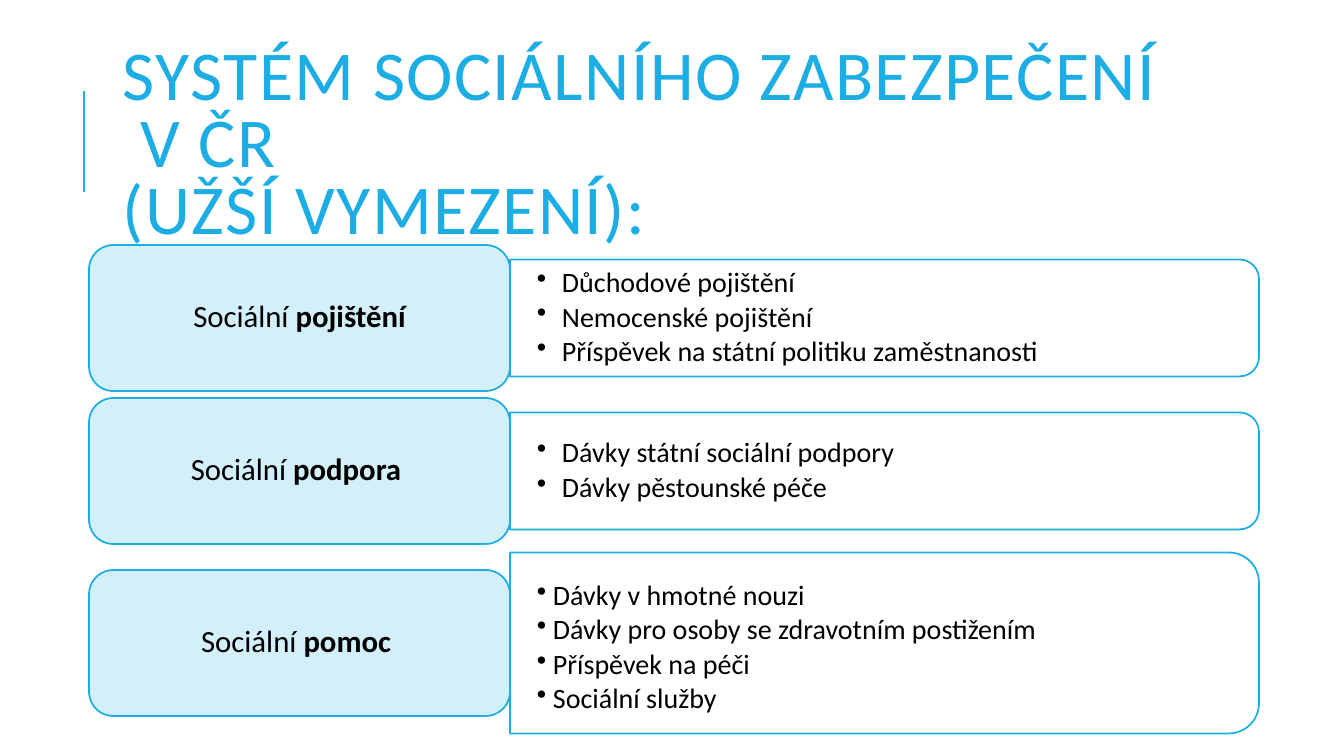
from lxml import etree
from pptx import Presentation
from pptx.dml.color import RGBColor
from pptx.enum.shapes import MSO_CONNECTOR, MSO_SHAPE
from pptx.enum.text import MSO_ANCHOR, MSO_AUTO_SIZE, PP_ALIGN
from pptx.oxml.ns import qn
from pptx.util import Emu, Pt

TITLE = ["SYSTÉM SOCIÁLNÍHO ZABEZPEČENÍ", " V ČR", "(UŽŠÍ VYMEZENÍ):"]
ROWS = [
    dict(label="pojištění", top=245, panel_h=117, shift=0, indent=25, align=PP_ALIGN.JUSTIFY,
         items=["Důchodové pojištění", "Nemocenské pojištění",
                "Příspěvek na státní politiku zaměstnanosti"]),
    dict(label="podpora ", top=398, panel_h=117, shift=0, indent=25, align=PP_ALIGN.JUSTIFY,
         items=["Dávky státní sociální podpory", "Dávky pěstounské péče"]),
    dict(label="pomoc ", top=570, panel_h=181, shift=5, indent=16, align=PP_ALIGN.LEFT,
         items=["Dávky v hmotné nouzi", "Dávky pro osoby se zdravotním postižením",
                "Příspěvek na péči", "Sociální služby"]),
]

BLUE = RGBColor(0x1C, 0xAD, 0xE4)
PALE = RGBColor(0xD2, 0xEF, 0xFA)
WHITE = RGBColor(0xFF, 0xFF, 0xFF)
BLACK = RGBColor(0, 0, 0)
FONT = "Calibri"
LABEL_X, LABEL_W, LABEL_H = 89, 421, 146
PANEL_X, PANEL_W = LABEL_X + LABEL_W, 749


def px(n):
    return Emu(round(n * 914400 / 100.8))


def add_run(p, text, size, color=BLACK, bold=False):
    r = p.add_run()
    r.text = text
    r.font.name = FONT
    r.font.size = Pt(size)
    r.font.color.rgb = color
    r.font.bold = bold
    return r


def add_box(s, kind, x, y, w, h, fill):
    sp = s.shapes.add_shape(kind, px(x), px(y), px(w), px(h))
    sp.shadow.inherit = False
    sp.fill.solid()
    sp.fill.fore_color.rgb = fill
    sp.line.color.rgb = BLUE
    sp.line.width = Pt(1.25)
    return sp


def set_frame(tf, side, edge):
    tf.word_wrap = True
    tf.auto_size = MSO_AUTO_SIZE.NONE
    tf.vertical_anchor = MSO_ANCHOR.MIDDLE
    tf.margin_left = tf.margin_right = px(side)
    tf.margin_top = tf.margin_bottom = px(edge)


def set_bullet(p, indent):
    pPr = p._p.get_or_add_pPr()
    pPr.set("marL", str(px(indent)))
    pPr.set("indent", str(-px(indent)))
    etree.SubElement(pPr, qn("a:buChar")).set("char", "•")


def add_title(s):
    title = s.shapes.title
    title.left, title.top, title.width, title.height = px(113), px(65), px(1072), px(165)
    tf = title.text_frame
    set_frame(tf, 10, 5)
    p = tf.paragraphs[0]
    p.alignment = PP_ALIGN.LEFT
    p.line_spacing = 0.8
    for i, line in enumerate(TITLE):
        if i:
            p.add_line_break()
        r = add_run(p, line, 50, BLUE)
        r.font._element.set("spc", "100")
    rule = s.shapes.add_connector(MSO_CONNECTOR.STRAIGHT, px(84), px(192), px(84), px(91))
    rule.line.color.rgb = BLUE
    rule.line.width = Pt(1.5)
    etree.SubElement(rule._element.spPr, qn("a:effectLst"))


def add_row(s, row):
    middle = row["top"] + LABEL_H / 2
    h = row["panel_h"]
    panel = add_box(s, MSO_SHAPE.ROUND_2_SAME_RECTANGLE, PANEL_X + (PANEL_W - h) / 2,
                    middle - PANEL_W / 2, h, PANEL_W, WHITE)
    panel.rotation = 90

    tb = s.shapes.add_textbox(px(PANEL_X), px(middle - h / 2 + row["shift"]), px(PANEL_W), px(h))
    tf = tb.text_frame
    set_frame(tf, 27, 14)
    for i, item in enumerate(row["items"]):
        p = tf.add_paragraph() if i else tf.paragraphs[0]
        p.alignment = row["align"]
        p.line_spacing = 0.9
        p.space_after = Pt(3)
        set_bullet(p, row["indent"])
        add_run(p, item, 20)

    label = add_box(s, MSO_SHAPE.ROUNDED_RECTANGLE, LABEL_X, row["top"], LABEL_W, LABEL_H, PALE)
    set_frame(label.text_frame, 16, 12)
    p = label.text_frame.paragraphs[0]
    p.alignment = PP_ALIGN.CENTER
    p.line_spacing = 0.9
    add_run(p, "Sociální ", 22)
    add_run(p, row["label"], 22, bold=True)


def main():
    prs = Presentation()
    prs.slide_width, prs.slide_height = px(1344), px(756)
    s = prs.slides.add_slide(prs.slide_layouts[5])
    add_title(s)
    for row in ROWS:
        add_row(s, row)
    prs.save("out.pptx")


if __name__ == "__main__":
    main()
